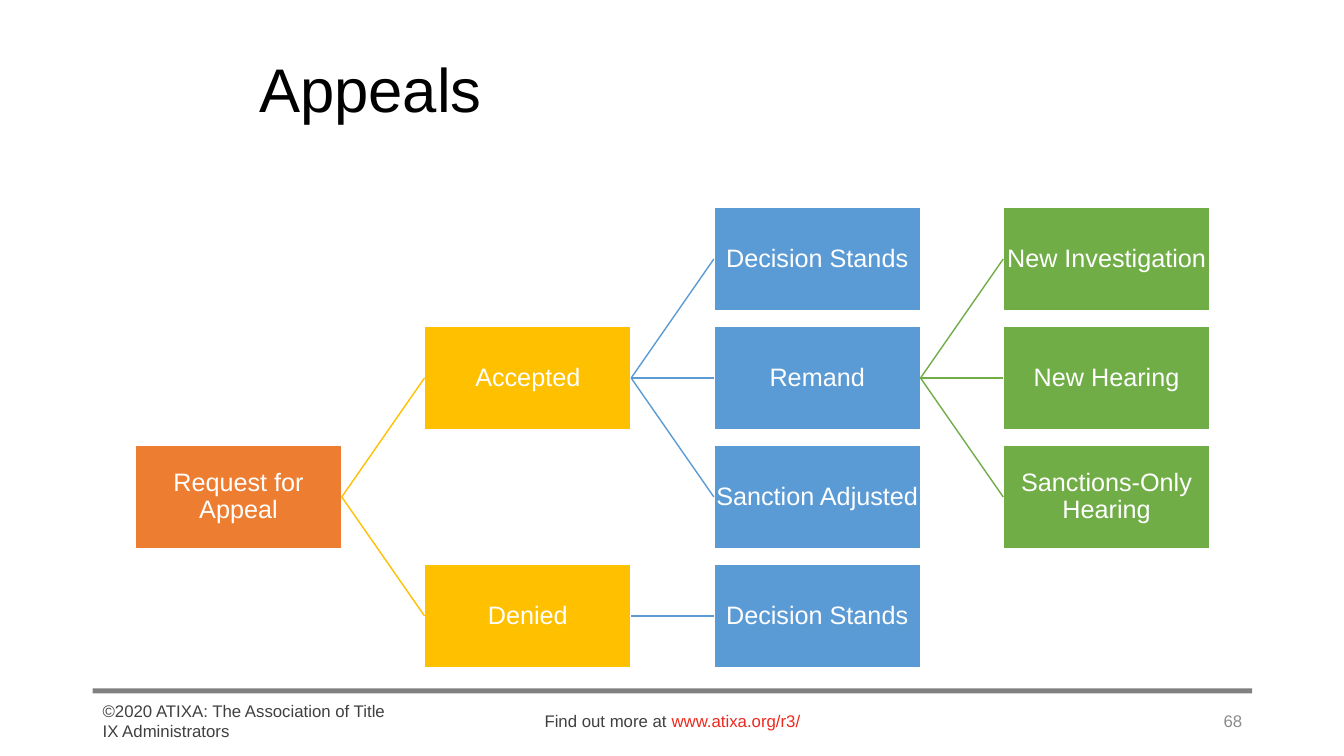
import pptx
import pptx.dml.color
import pptx.enum.shapes
import pptx.enum.text
import pptx.oxml.ns
import pptx.util
import lxml.etree

Inches = pptx.util.Inches
ALIGN = pptx.enum.text.PP_ALIGN
MIDDLE = pptx.enum.text.MSO_ANCHOR.MIDDLE


def rgb(value):
    return pptx.dml.color.RGBColor.from_string(value)


def style(span, size, color):
    span.font.name = "Arial"
    span.font.size = pptx.util.Pt(size)
    span.font.color.rgb = rgb(color)


deck = pptx.Presentation()
deck.slide_width = Inches(13.33)
deck.slide_height = Inches(7.5)
page = deck.slides.add_slide(deck.slide_layouts[5])

# Title
title = page.shapes.title
title.left, title.top = Inches(2.47), Inches(0.4)
title.width, title.height = Inches(9.94), Inches(1.04)
title.text_frame.text = "Appeals"
title.text_frame.vertical_anchor = MIDDLE
para = title.text_frame.paragraphs[0]
para.alignment = ALIGN.LEFT
para.line_spacing = 0.9
style(para.runs[0], 44, "000000")

# Footer rule
rule = page.shapes.add_shape(pptx.enum.shapes.MSO_SHAPE.RECTANGLE,
                             Inches(0.92), Inches(6.83), Inches(11.5), Inches(0.05))
rule.shadow.inherit = False
rule.fill.solid()
rule.fill.fore_color.rgb = rgb("808080")
rule.line.fill.background()

# Footer texts: left, width, alignment, spans
footers = [
    (0.92, 3, ALIGN.LEFT,
     [("©2020 ATIXA: The Association of Title IX Administrators", "404040")]),
    (4.42, 4.5, ALIGN.CENTER,
     [("Find out more at ", "404040"), ("www.atixa.org/r3/", "EC291E")]),
    (9.42, 3, ALIGN.RIGHT, [("68", "8C8C8C")]),
]
for left, width, alignment, spans in footers:
    box = page.shapes.add_textbox(Inches(left), Inches(6.95), Inches(width), Inches(0.4))
    box.text_frame.word_wrap = True
    box.text_frame.vertical_anchor = MIDDLE
    para = box.text_frame.paragraphs[0]
    para.alignment = alignment
    for text, color in spans:
        span = para.add_run()
        span.text = text
        style(span, 12, color)

# Decision tree: text, column, row, index of the parent step
level_colors = ["ED7D31", "FFC000", "5B9BD5", "70AD47"]
steps = [
    ("Request for Appeal", 0, 2, None),
    ("Accepted", 1, 1, 0),
    ("Decision Stands", 2, 0, 1),
    ("Remand", 2, 1, 1),
    ("New Investigation", 3, 0, 3),
    ("New Hearing", 3, 1, 3),
    ("Sanctions-Only Hearing", 3, 2, 3),
    ("Sanction Adjusted", 2, 2, 1),
    ("Denied", 1, 3, 0),
    ("Decision Stands", 2, 3, 8),
]
RIGHT_SIDE, LEFT_SIDE = 3, 1
boxes = []
for text, column, row, parent in steps:
    color = level_colors[column]
    box = page.shapes.add_shape(pptx.enum.shapes.MSO_SHAPE.RECTANGLE,
                                Inches(1.34 + 2.87 * column), Inches(2.06 + 1.18 * row),
                                Inches(2.05), Inches(1.02))
    box.shadow.inherit = False
    box.fill.solid()
    box.fill.fore_color.rgb = rgb(color)
    box.line.color.rgb = rgb("FFFFFF")
    box.line.width = pptx.util.Pt(1)
    frame = box.text_frame
    frame.word_wrap = True
    frame.vertical_anchor = MIDDLE
    frame.margin_left = frame.margin_right = Inches(0.01)
    frame.margin_top = frame.margin_bottom = Inches(0.01)
    frame.text = text
    para = frame.paragraphs[0]
    para.alignment = ALIGN.CENTER
    para.line_spacing = 0.9
    style(para.runs[0], 18, "FFFFFF")
    boxes.append(box)

    # Branch from the parent step
    if parent is not None:
        branch = page.shapes.add_connector(pptx.enum.shapes.MSO_CONNECTOR.STRAIGHT, 0, 0, 0, 0)
        branch.begin_connect(boxes[parent], RIGHT_SIDE)
        branch.end_connect(box, LEFT_SIDE)
        branch.line.color.rgb = rgb(color)
        branch.line.width = pptx.util.Pt(1)
        lxml.etree.SubElement(branch.element.spPr, pptx.oxml.ns.qn("a:effectLst"))

deck.save("out.pptx")
